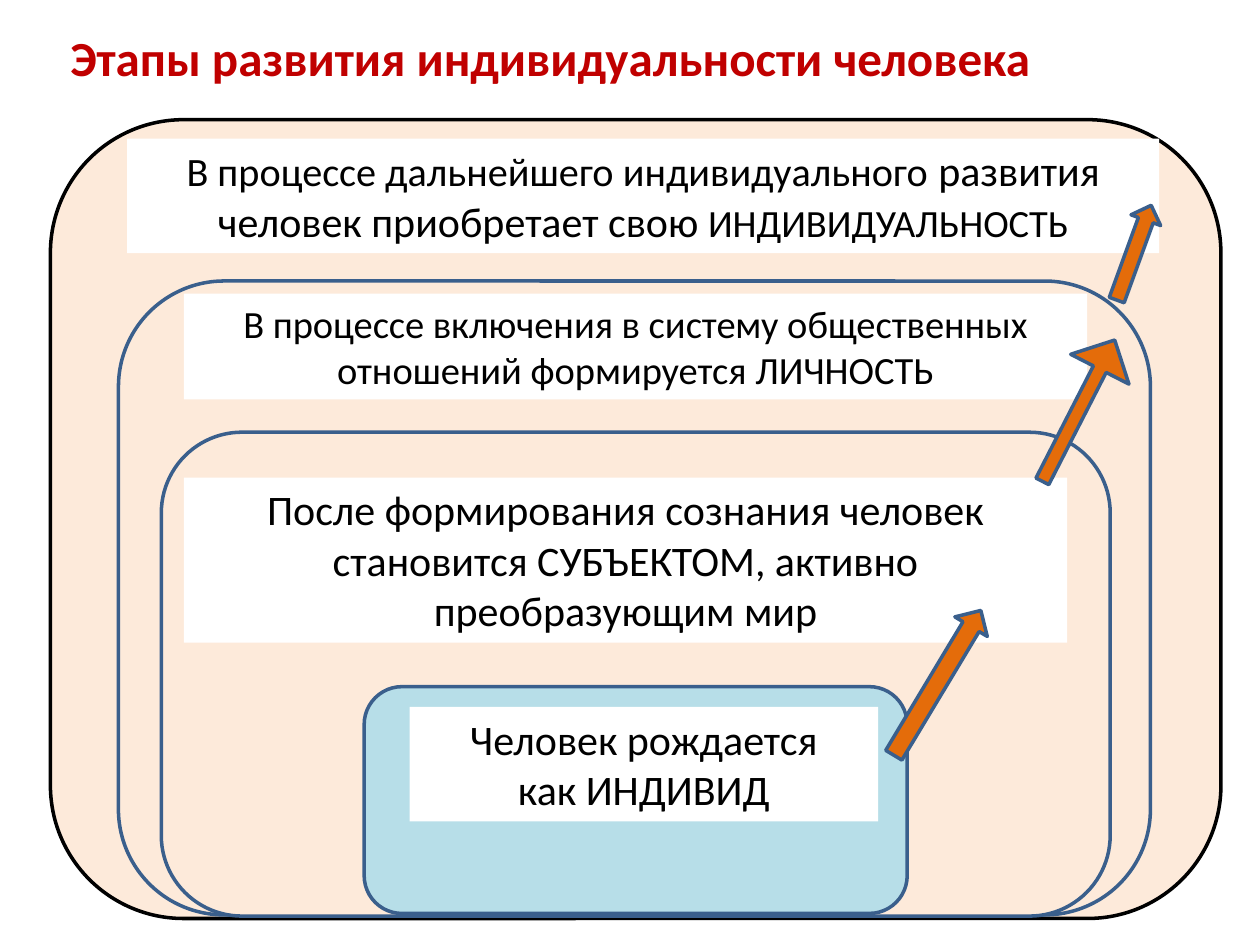
from pptx import Presentation
from pptx import util as u
from pptx.dml.color import RGBColor
from pptx.enum import shapes, text

COLORS = {
    "peach": "FDEADA", "sky": "B7DEE8", "orange": "E46C0A", "white": "FFFFFF",
    "blue": "3A5F8C", "black": "000000", "red": "C00000",
}

TITLE = "Этапы развития индивидуальности человека"
TITLE_BOX = (33.1, 10.1, 659.5, 41.8)

# Stages from the outermost frame to the innermost one;
# each paragraph is a list of (wording, size) runs
STAGES = [
    {"frame": (28.8, 68.4, 668.9, 456.5), "fill": "peach", "line": "black",
     "label": (72.7, 79.2, 589.7, 65.5),
     "paragraphs": [[("В процессе дальнейшего индивидуального ", 23),
                     ("развития человек приобретает свою ", 24),
                     ("ИНДИВИДУАЛЬНОСТЬ", 22)]]},
    {"frame": (67.7, 160.6, 589.7, 362.2), "fill": "peach", "line": "blue",
     "label": (105.1, 167.8, 516.2, 60.5),
     "paragraphs": [[("В процессе включения в систему общественных "
                      "отношений формируется ЛИЧНОСТЬ", 22)]]},
    {"frame": (92.2, 247, 542.2, 276.5), "fill": "peach", "line": "blue",
     "label": (105.1, 272.9, 504.7, 94.3),
     "paragraphs": [[("После формирования сознания человек становится "
                      "СУБЪЕКТОМ, активно преобразующим мир", 24)]]},
    {"frame": (208.1, 392.4, 310.3, 129.6), "fill": "sky", "line": "blue",
     "label": (234, 403.9, 267.8, 65.5),
     "paragraphs": [[("Человек рождается", 24)], [("как ИНДИВИД", 24)]]},
]

# Box, rotation, shaft thickness
ARROWS = [
    ((487.4, 379.4, 96.5, 21.6), 301, 0.5),
    ((571, 216, 90.7, 37.4), 297.1, 0.22),
    ((619.2, 135.4, 57.6, 18), 290, 0.5),
]


def color(name):
    return RGBColor.from_string(COLORS[name])


def points(box):
    return [u.Pt(value) for value in box]


def add_outlined(slide, kind, box, fill, line):
    shape = slide.shapes.add_shape(kind, *points(box))
    shape.shadow.inherit = False
    shape.fill.solid()
    shape.fill.fore_color.rgb = color(fill)
    shape.line.color.rgb = color(line)
    shape.line.width = u.Pt(2)
    return shape


def add_text(slide, box, paragraphs, font_color, paragraph_format, bold=False):
    shape = slide.shapes.add_textbox(*points(box))
    frame = shape.text_frame
    frame.word_wrap = True
    for index, runs in enumerate(paragraphs):
        paragraph = frame.add_paragraph() if index else frame.paragraphs[0]
        for name, value in paragraph_format.items():
            setattr(paragraph, name, value)
        for wording, size in runs:
            run = paragraph.add_run()
            run.text = wording
            font_format = {"name": "Calibri", "size": u.Pt(size), "bold": bold}
            for name, value in font_format.items():
                setattr(run.font, name, value)
            run.font.color.rgb = color(font_color)
    return shape


def main():
    presentation = Presentation()
    presentation.slide_width, presentation.slide_height = u.Pt(720), u.Pt(540)
    slide = presentation.slides.add_slide(presentation.slide_layouts[6])

    # Nested stages with their labels
    for stage in STAGES:
        add_outlined(slide, shapes.MSO_SHAPE.ROUNDED_RECTANGLE,
                     stage["frame"], stage["fill"], stage["line"])
        label = add_text(slide, stage["label"], stage["paragraphs"], "black",
                         {"alignment": text.PP_ALIGN.CENTER})
        label.fill.solid()
        label.fill.fore_color.rgb = color("white")

    # Arrows from each stage to the next
    for box, rotation, thickness in ARROWS:
        arrow = add_outlined(slide, shapes.MSO_SHAPE.RIGHT_ARROW, box, "orange", "blue")
        arrow.rotation = rotation
        arrow.adjustments[0] = thickness

    # Title
    add_text(slide, TITLE_BOX, [[(TITLE, 28)]], "red",
             {"line_spacing": 1.07, "space_after": u.Pt(8)}, bold=True)

    presentation.save("out.pptx")


if __name__ == "__main__":
    main()
